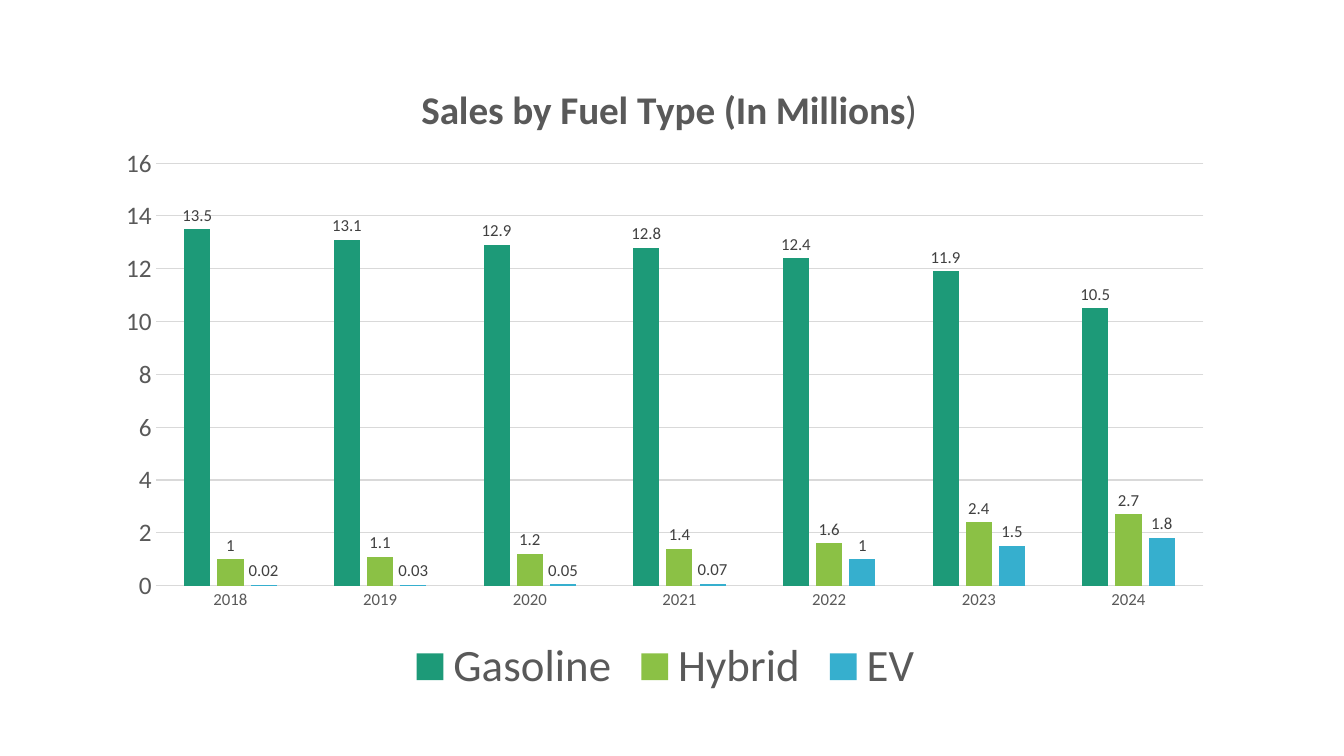
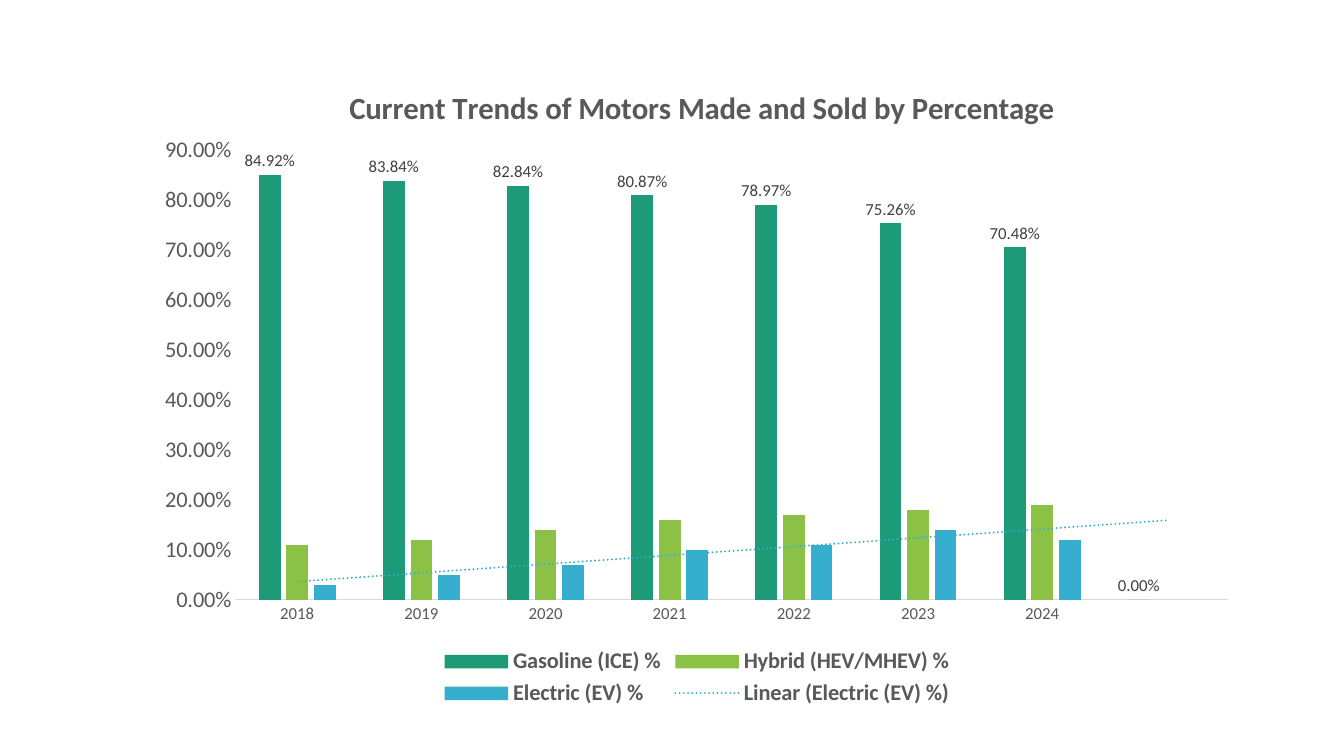
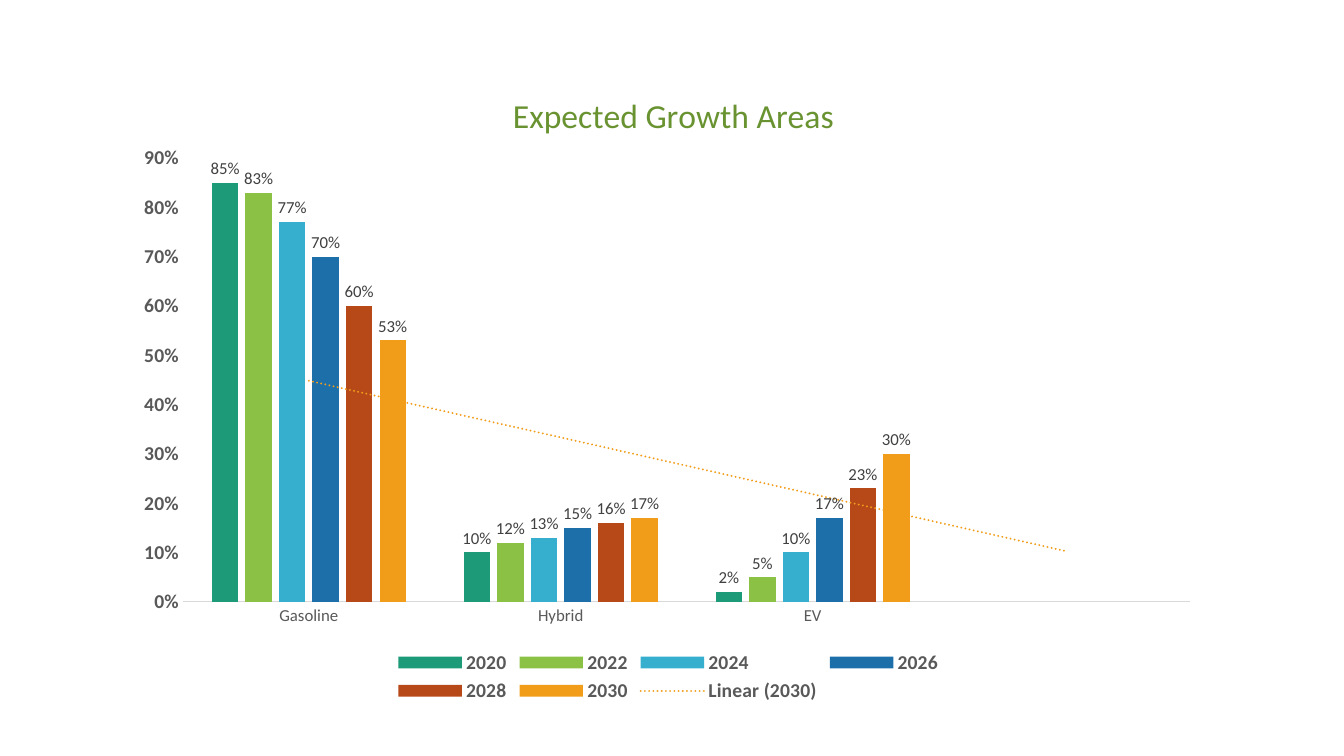
from lxml.etree import SubElement
from pptx import Presentation
from pptx.chart.data import CategoryChartData
from pptx.dml.color import RGBColor
from pptx.enum.chart import XL_CHART_TYPE, XL_LABEL_POSITION, XL_LEGEND_POSITION, XL_TICK_MARK
from pptx.oxml import parse_xml
from pptx.oxml.ns import nsdecls, qn
from pptx.util import Cm, Pt

HUES = {"teal": "1D9A78", "green": "8BC145", "sky": "36AFCE", "blue": "1D6FA9",
        "rust": "B74919", "gold": "F19D19", "olive": "699331",
        "text": "595959", "label": "404040", "rule": "D9D9D9", "black": "000000"}
BARS = ["teal", "green", "sky", "blue", "rust", "gold"]
YEARS = [str(year) for year in range(2018, 2025)]


class Deck:
    def __init__(self):
        self.prs = Presentation()
        self.prs.slide_width, self.prs.slide_height = Cm(33.87), Cm(19.05)
        self.slide = None

    def page(self):
        self.slide = self.prs.slides.add_slide(self.prs.slide_layouts[6])

    def style(self, font, size, hue="text", bold=False):
        font.name, font.size, font.bold = "Calibri", Pt(size), bold
        font.color.rgb = RGBColor.from_string(HUES[hue])

    def lay(self, node, index, **spots):
        """Set the manual layout of a chart part, as shares of the chart."""
        for old in node.findall(qn("c:layout")):
            node.remove(old)
        layout = parse_xml(f"<c:layout {nsdecls('c')}><c:manualLayout/></c:layout>")
        for tag, val in spots.items():
            SubElement(layout[0], qn(f"c:{tag}")).set("val", str(val))
        node.insert(index, layout)

    def chart(self, box, cats, rows, fmt="General"):
        data = CategoryChartData(number_format=fmt)
        data.categories = cats
        for name, vals in rows:
            data.add_series(name, vals)
        frame = self.slide.shapes.add_chart(
            XL_CHART_TYPE.COLUMN_CLUSTERED, *map(Cm, box), data)
        chart = frame.chart
        self.style(chart.font, 10, "black")
        plot = chart.plots[0]
        plot.gap_width, plot.overlap, plot.vary_by_categories = 219, -27, False
        for bar, hue in zip(plot.series, BARS):
            bar.format.fill.solid()
            bar.format.fill.fore_color.rgb = RGBColor.from_string(HUES[hue])
        return chart

    def title(self, chart, left, runs, size, hue="text"):
        head = chart.chart_title
        para = head.text_frame.paragraphs[0]
        for text, bold in runs:
            run = para.add_run()
            run.text = text
            self.style(run.font, size, hue, bold)
        self.lay(head._element, 1, xMode="edge", yMode="edge", x=left, y=0.036)

    def area(self, chart, x, y, w, h):
        node = chart._chartSpace.chart.plotArea
        self.lay(node, 0, layoutTarget="inner", xMode="edge", yMode="edge",
                 x=x, y=y, w=w, h=h)

    def axes(self, chart, top, step, size, fmt, bold=False, grid=False):
        cat, val = chart.category_axis, chart.value_axis
        for axis in (cat, val):
            axis.major_tick_mark = axis.minor_tick_mark = XL_TICK_MARK.NONE
        self.style(cat.tick_labels.font, 12)
        self.style(val.tick_labels.font, size, bold=bold)
        val.tick_labels.number_format = fmt
        val.tick_labels.number_format_is_linked = False
        val.minimum_scale, val.maximum_scale, val.major_unit = 0, top, step
        val.format.line.fill.background()
        val.has_major_gridlines = grid
        lines = [cat.format.line]
        if grid:
            lines.append(val.major_gridlines.format.line)
        for line in lines:
            line.width = Pt(0.75)
            line.color.rgb = RGBColor.from_string(HUES["rule"])

    def legend(self, chart, size, bold=False):
        chart.has_legend = True
        chart.legend.position = XL_LEGEND_POSITION.BOTTOM
        chart.legend.include_in_layout = False
        self.style(chart.legend.font, size, bold=bold)

    def labels(self, bars, fmt):
        for bar in bars:
            tags = bar.data_labels
            tags.show_value = True
            tags.position = XL_LABEL_POSITION.OUTSIDE_END
            tags.number_format, tags.number_format_is_linked = fmt, False
            self.style(tags.font, 12, "label")

    def trend(self, bar, hue):
        """Add a dotted linear trend line to a series."""
        bar._element.find(qn("c:cat")).addprevious(parse_xml(
            f'<c:trendline {nsdecls("c", "a")}><c:spPr><a:ln w="{Pt(1.5)}" cap="rnd">'
            f'<a:solidFill><a:srgbClr val="{HUES[hue]}"/></a:solidFill>'
            '<a:prstDash val="sysDot"/></a:ln></c:spPr>'
            '<c:trendlineType val="linear"/><c:dispRSqr val="0"/>'
            '<c:dispEq val="0"/></c:trendline>'))


def sales(deck):
    deck.page()
    chart = deck.chart((2.62, 1.5, 28.3, 16.23), YEARS, [
        ("Gasoline", [13.5, 13.1, 12.9, 12.8, 12.4, 11.9, 10.5]),
        ("Hybrid", [1, 1.1, 1.2, 1.4, 1.6, 2.4, 2.7]),
        ("EV", [0.02, 0.03, 0.05, 0.07, 1, 1.5, 1.8])])
    deck.title(chart, 0.28, [("Sales by Fuel Type (In Millions", True), (")", False)], 28)
    deck.area(chart, 0.046, 0.161, 0.933, 0.656)
    deck.axes(chart, 16, 2, 18, "General", grid=True)
    deck.legend(chart, 32)
    deck.labels(chart.plots[0].series, "General")


def trends(deck):
    deck.page()
    chart = deck.chart((3.61, 1.45, 27.91, 16.48), YEARS + [""], [
        ("Gasoline (ICE) %", [0.8492, 0.8384, 0.8284, 0.8087, 0.7897, 0.7526, 0.7048, 0]),
        ("Hybrid (HEV/MHEV) %", [0.11, 0.12, 0.14, 0.16, 0.17, 0.18, 0.19, None]),
        ("Electric (EV) %", [0.03, 0.05, 0.07, 0.1, 0.11, 0.14, 0.12, None])], "0.00%")
    deck.title(chart, 0.181,
               [("Current Trends of Motors Made and Sold by Percentage", True)], 22)
    deck.area(chart, 0.083, 0.141, 0.897, 0.688)
    deck.axes(chart, 0.9, 0.1, 16, "0.00%")
    deck.legend(chart, 16, True)
    bars = list(chart.plots[0].series)
    deck.labels(bars[:1], "0.00%")
    deck.trend(bars[-1], "sky")


def growth(deck):
    deck.page()
    chart = deck.chart((3.1, 1.6, 27.48, 16.21), ["Gasoline", "Hybrid", "EV", ""], [
        ("2020", [0.85, 0.1, 0.02, None]),
        ("2022", [0.83, 0.12, 0.05, None]),
        ("2024", [0.77, 0.13, 0.1, None]),
        ("2026", [0.7, 0.15, 0.17, None]),
        ("2028", [0.6, 0.16, 0.23, None]),
        ("2030", [0.53, 0.17, 0.3, None])], "0%")
    deck.title(chart, 0.352, [("Expected Growth Areas", False)], 24, "olive")
    deck.area(chart, 0.055, 0.147, 0.924, 0.69)
    deck.axes(chart, 0.9, 0.1, 14, "0%", bold=True)
    deck.legend(chart, 14, True)
    bars = list(chart.plots[0].series)
    deck.labels(bars, "0%")
    deck.trend(bars[-1], "gold")


def main():
    deck = Deck()
    for build in (sales, trends, growth):
        build(deck)
    deck.prs.save("out.pptx")


if __name__ == "__main__":
    main()
